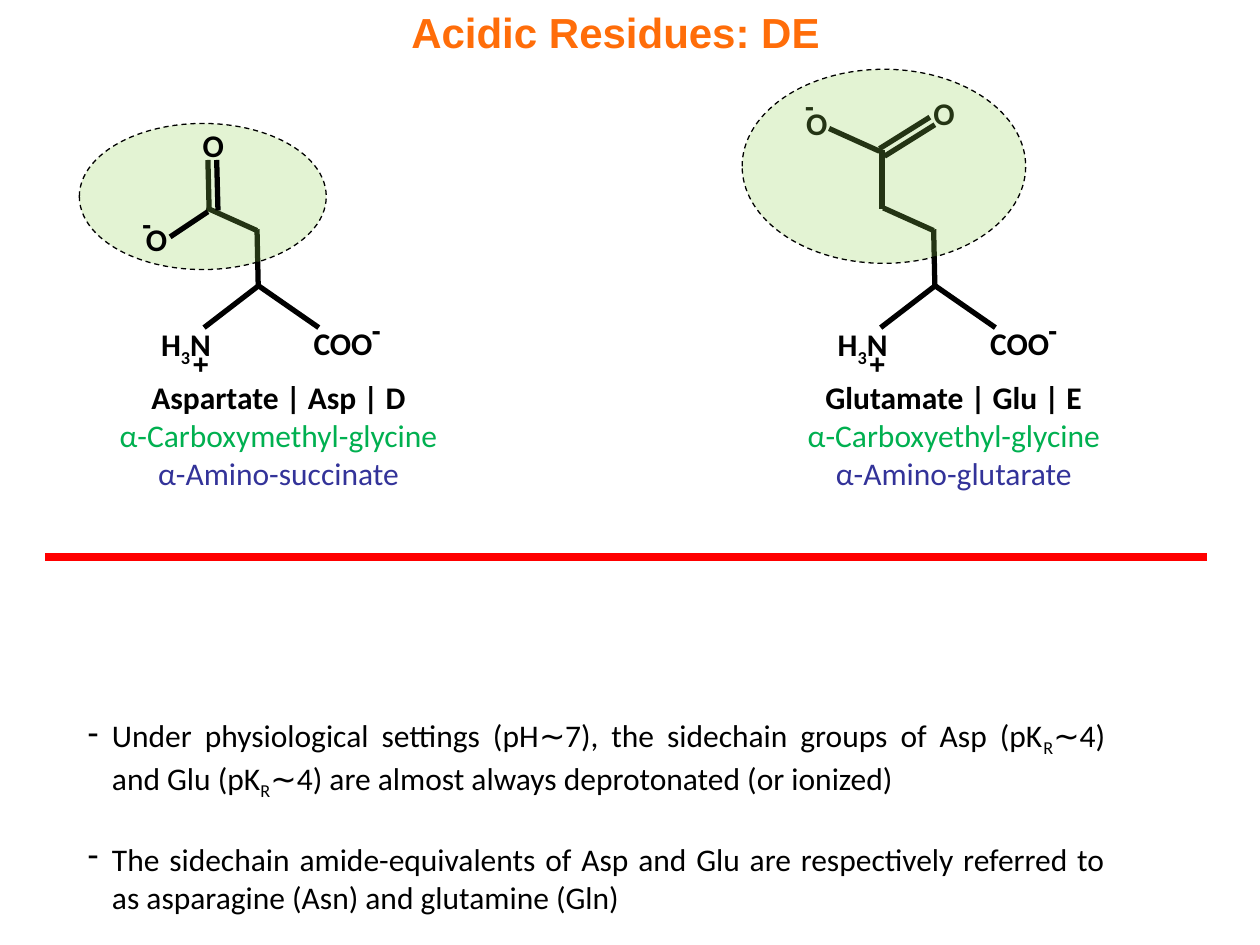
from dataclasses import dataclass
from typing import NamedTuple

from lxml import etree
from pptx import Presentation
from pptx.dml.color import RGBColor
from pptx.enum.dml import MSO_LINE
from pptx.enum.shapes import MSO_CONNECTOR, MSO_SHAPE
from pptx.enum.text import MSO_ANCHOR, MSO_AUTO_SIZE, PP_ALIGN
from pptx.oxml.ns import qn
from pptx.util import Inches, Pt

STRAIGHT = MSO_CONNECTOR.STRAIGHT
RECT, OVAL = MSO_SHAPE.RECTANGLE, MSO_SHAPE.OVAL
DASH = MSO_LINE.DASH
TOP = MSO_ANCHOR.TOP
FIT = MSO_AUTO_SIZE.SHAPE_TO_FIT_TEXT
LEFT, CENTER, JUSTIFY = PP_ALIGN.LEFT, PP_ALIGN.CENTER, PP_ALIGN.JUSTIFY


@dataclass(frozen=True)
class Theme:
    title: str = "FF6D09"
    ink: str = "000000"
    paper: str = "FFFFFF"
    rule: str = "FF0000"
    halo: str = "92D050"
    systematic: str = "00B050"
    alternative: str = "333399"
    heading_font: str = "Arial"
    body_font: str = "Calibri"
    title_size: int = 24
    body_size: int = 18
    charge_size: int = 16
    bond_width: float = 3
    rule_width: float = 5
    halo_width: float = 0.75
    halo_alpha: int = 25


THEME = Theme()


class Box(NamedTuple):
    x: float
    y: float
    w: float
    h: float


class Bond(NamedTuple):
    x1: float
    y1: float
    x2: float
    y2: float


class Atom(NamedTuple):
    text: str
    x: float
    y: float


class Residue(NamedTuple):
    dx: float
    names: tuple[str, str, str]
    names_box: Box
    halo: Box
    bonds_below: list[Bond]
    atoms_below: list[Atom]
    bonds_above: list[Bond]
    atoms_above: list[Atom]


BACKBONE = [Bond(2.04, 1.82, 2.05, 2.28), Bond(2.04, 1.83, 1.64, 1.65),
            Bond(2.04, 2.26, 2.53, 2.6), Bond(2.05, 2.27, 1.62, 2.6)]
GROUPS = [(["H", "3", "N"], Box(1.18, 2.53, 0.61, 0.4)),
          (["COO"], Box(2.39, 2.52, 0.67, 0.4))]
BACKBONE_CHARGES = [Atom("+", 1.43, 2.7), Atom("-", 2.85, 2.43)]
ATOM_SIZES = {"O": (0.37, 0.4), "+": (0.33, 0.37), "-": (0.28, 0.37)}

RESIDUES = [
    Residue(
        0, ("Aspartate | Asp | D", "α-Carboxymethyl-glycine", "α-Amino-succinate"),
        Box(0.8, 2.95, 2.82, 1.01), Box(0.63, 0.98, 1.96, 1.16),
        [Bond(1.65, 1.27, 1.66, 1.67)], [],
        [Bond(1.72, 1.27, 1.73, 1.67), Bond(1.65, 1.68, 1.35, 1.88)],
        [Atom("O", 1.51, 0.95), Atom("-", 1.03, 1.59), Atom("O", 1.06, 1.7)]),
    Residue(
        5.37, ("Glutamate | Glu | E", "α-Carboxyethyl-glycine", "α-Amino-glutarate"),
        Box(6.27, 2.95, 2.6, 1.01), Box(5.89, 0.55, 2.25, 1.54),
        [Bond(7, 1.19, 7, 1.66), Bond(7.38, 0.93, 6.98, 1.18),
         Bond(7.42, 0.99, 7.02, 1.24), Bond(6.98, 1.2, 6.58, 1.02)],
        [Atom("O", 7.31, 0.7), Atom("-", 6.29, 0.65), Atom("O", 6.3, 0.78)],
        [], []),
]

NOTES = [
    ["Under physiological settings (pH∼7), the sidechain groups of Asp (pK", "R",
     "∼4) and Glu (pK", "R",
     "∼4) are almost always deprotonated (or ionized)"],
    ["The sidechain amide-equivalents of Asp and Glu are respectively referred to "
     "as asparagine (Asn) and glutamine (Gln)"],
]


def rgb(color: str) -> RGBColor:
    return RGBColor.from_string(color)


def inches(box: Box) -> list[Inches]:
    return [Inches(v) for v in box]


def add_runs(p, parts: list[str], size: int = THEME.body_size, color: str = THEME.ink,
             bold: bool = False, font: str = THEME.body_font) -> None:
    """Add one run per part; every second part is a subscript."""
    for i, text in enumerate(parts):
        r = p.add_run()
        r.text = text
        r.font.size, r.font.name, r.font.bold = Pt(size), font, bold
        r.font.color.rgb = rgb(color)
        if i % 2:
            r.font._element.set("baseline", "-25000")


def add_textbox(s, box: Box, wrap: bool = False):
    tf = s.shapes.add_textbox(*inches(box)).text_frame
    tf.word_wrap, tf.auto_size = wrap, FIT
    return tf


def add_line(s, line: Bond, color: str, width: float) -> None:
    c = s.shapes.add_connector(STRAIGHT, *(Inches(v) for v in line))
    c.line.color.rgb, c.line.width = rgb(color), Pt(width)
    etree.SubElement(c._element.spPr, qn("a:effectLst"))


def add_bonds(s, bonds: list[Bond], dx: float = 0) -> None:
    for b in bonds:
        add_line(s, Bond(b.x1 + dx, b.y1, b.x2 + dx, b.y2), THEME.ink, THEME.bond_width)


def add_atoms(s, atoms: list[Atom], dx: float = 0) -> None:
    for a in atoms:
        tf = add_textbox(s, Box(a.x + dx, a.y, *ATOM_SIZES[a.text]))
        if a.text == "O":
            add_runs(tf.paragraphs[0], [a.text], bold=True)
        else:
            add_runs(tf.paragraphs[0], [a.text], THEME.charge_size, bold=True,
                     font=THEME.heading_font)


def add_group(s, parts: list[str], box: Box) -> None:
    sp = s.shapes.add_shape(RECT, *inches(box))
    sp.shadow.inherit = False
    sp.fill.solid()
    sp.fill.fore_color.rgb = rgb(THEME.paper)
    sp.line.fill.background()
    tf = sp.text_frame
    tf.word_wrap, tf.auto_size, tf.vertical_anchor = False, FIT, TOP
    tf.paragraphs[0].alignment = LEFT
    add_runs(tf.paragraphs[0], parts, bold=True)


def add_halo(s, box: Box) -> None:
    """Draw the translucent oval that marks the sidechain."""
    sp = s.shapes.add_shape(OVAL, *inches(box))
    sp.shadow.inherit = False
    sp.fill.solid()
    sp.fill.fore_color.rgb = rgb(THEME.halo)
    color = sp._element.spPr.find(qn("a:solidFill"))[0]
    etree.SubElement(color, qn("a:alpha"), val=str(THEME.halo_alpha * 1000))
    sp.line.color.rgb, sp.line.width = rgb(THEME.ink), Pt(THEME.halo_width)
    sp.line.dash_style = DASH


def add_names(s, names: tuple[str, str, str], box: Box) -> None:
    tf = add_textbox(s, box)
    colors = (THEME.ink, THEME.systematic, THEME.alternative)
    for i, (name, color) in enumerate(zip(names, colors)):
        p = tf.add_paragraph() if i else tf.paragraphs[0]
        p.alignment = CENTER
        add_runs(p, [name], color=color, bold=i == 0)


def add_residue(s, res: Residue) -> None:
    for parts, box in GROUPS:
        add_group(s, parts, box._replace(x=box.x + res.dx))
    add_bonds(s, BACKBONE, res.dx)
    add_atoms(s, BACKBONE_CHARGES, res.dx)
    add_names(s, res.names, res.names_box)
    add_bonds(s, res.bonds_below)
    add_atoms(s, res.atoms_below)
    add_halo(s, res.halo)
    add_bonds(s, res.bonds_above)
    add_atoms(s, res.atoms_above)


def add_notes(s) -> None:
    tf = add_textbox(s, Box(0.6, 5.63, 8.27, 1.62), wrap=True)
    for i, parts in enumerate(NOTES):
        p = tf.add_paragraph() if i else tf.paragraphs[0]
        p.alignment = JUSTIFY
        p.space_before = Pt(22 * i)
        pPr = p._p.get_or_add_pPr()
        pPr.set("marL", str(Inches(0.19)))
        pPr.set("indent", str(-Inches(0.19)))
        etree.SubElement(pPr, qn("a:buChar"), char="-")
        add_runs(p, parts)


def add_title(s, text: str) -> None:
    sp = s.shapes.title
    sp.left, sp.top, sp.width, sp.height = inches(Box(2.75, 0, 4.27, 0.5))
    tf = sp.text_frame
    tf.word_wrap, tf.auto_size, tf.vertical_anchor = True, FIT, TOP
    tf.paragraphs[0].alignment = CENTER
    add_runs(tf.paragraphs[0], [text], THEME.title_size, THEME.title, True,
             THEME.heading_font)


def main() -> None:
    prs = Presentation()
    prs.slide_width, prs.slide_height = Inches(10), Inches(7.5)
    s = prs.slides.add_slide(prs.slide_layouts[5])
    add_title(s, "Acidic Residues: DE")
    add_line(s, Bond(0.36, 4.42, 9.58, 4.42), THEME.rule, THEME.rule_width)
    for res in RESIDUES:
        add_residue(s, res)
    add_notes(s)
    prs.save("out.pptx")


if __name__ == "__main__":
    main()
